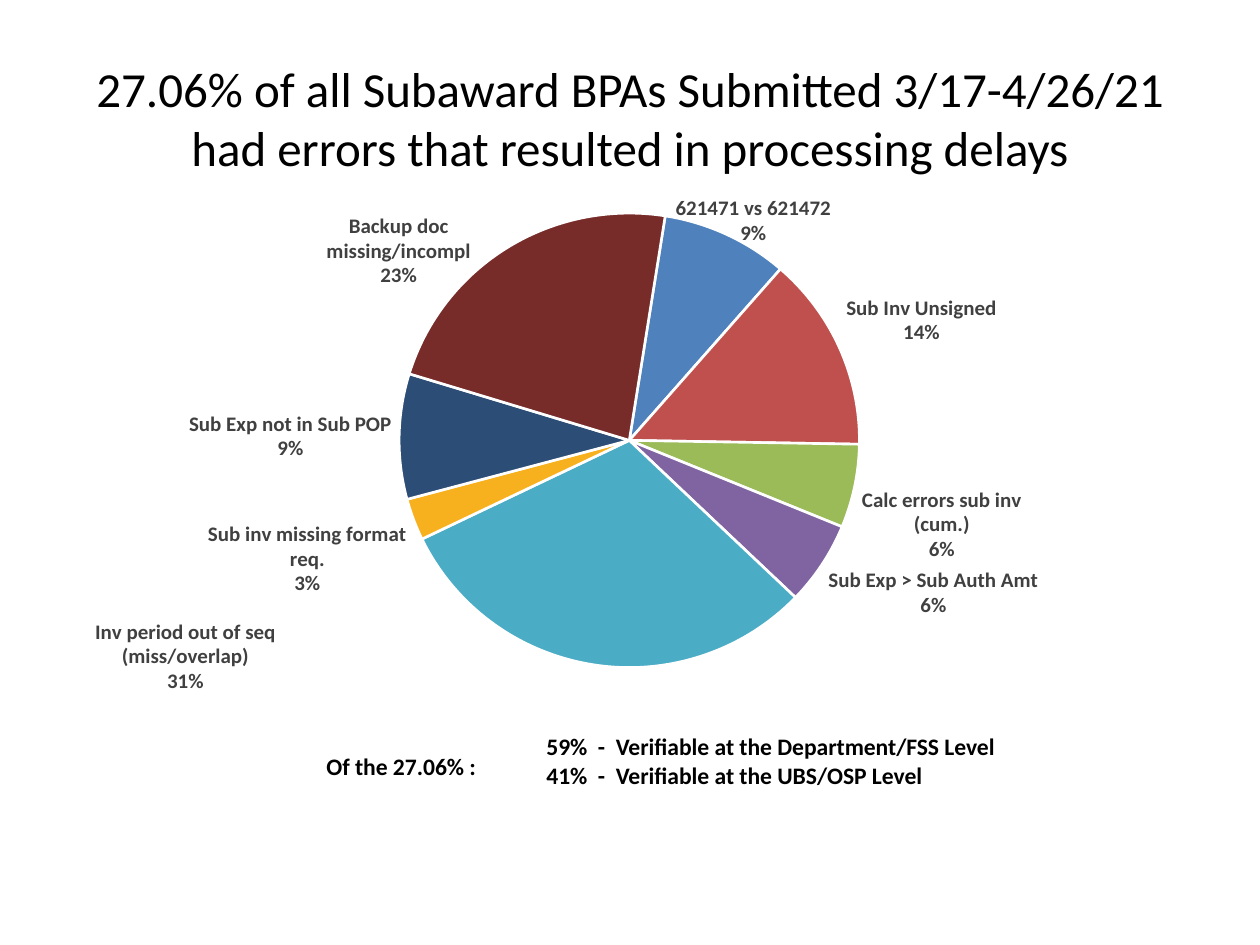
from lxml import etree
from pptx import Presentation
from pptx.chart.data import CategoryChartData
from pptx.dml.color import RGBColor
from pptx.enum.chart import XL_CHART_TYPE as ChartType, XL_LABEL_POSITION as LabelPos
from pptx.enum.text import MSO_ANCHOR as Anchor, PP_ALIGN as Align
from pptx.oxml import parse_xml
from pptx.oxml.ns import nsdecls, qn
from pptx.util import Emu, Pt

PX = 914400 / 126
FONT = "Calibri"
BLACK = RGBColor(0x00, 0x00, 0x00)
WHITE = RGBColor(0xFF, 0xFF, 0xFF)
GREY = RGBColor(0x40, 0x40, 0x40)

# Error type, share of errors, slice colour
ERRORS = [
    ("621471 vs 621472", 9, RGBColor(0x4F, 0x81, 0xBD)),
    ("Sub Inv Unsigned", 14, RGBColor(0xC0, 0x50, 0x4D)),
    ("Calc errors sub inv (cum.)", 6, RGBColor(0x9B, 0xBB, 0x59)),
    ("Sub Exp > Sub Auth Amt", 6, RGBColor(0x80, 0x64, 0xA2)),
    ("Inv period out of seq (miss/overlap)", 31, RGBColor(0x4B, 0xAC, 0xC6)),
    ("Sub inv missing format req.", 3, RGBColor(0xF7, 0xB1, 0x1E)),
    ("Sub Exp not in Sub POP", 9, RGBColor(0x2C, 0x4D, 0x75)),
    ("Backup doc missing/incompl", 23, RGBColor(0x77, 0x2C, 0x2A)),
]
# Labels moved from their usual place, as shares of the chart size
LABEL_SHIFTS = {0: (-0.05, 0.03), 4: (-0.3, -0.09), 7: (-0.03, 0.08)}
PLOT_AREA = {"x": 0.28, "y": 0.095, "w": 0.425, "h": 0.783}


def px(*lengths):
    return [Emu(round(n * PX)) for n in lengths]


def set_font(font, size, color, bold=False):
    font.name, font.size, font.bold = FONT, Pt(size), bold
    font.color.rgb = color


def add_text(slide, box, paragraphs, size, bold=False, wrap=False,
             align=Align.LEFT, anchor=Anchor.TOP):
    """Add a text box; a newline inside a paragraph is a line break."""
    tf = slide.shapes.add_textbox(*px(*box)).text_frame
    tf.word_wrap, tf.vertical_anchor = wrap, anchor
    for i, text in enumerate(paragraphs):
        p = tf.add_paragraph() if i else tf.paragraphs[0]
        p.alignment = align
        for j, line in enumerate(text.split("\n")):
            if j:
                p.add_line_break()
            r = p.add_run()
            r.text = line
            set_font(r.font, size, BLACK, bold)


def manual_layout(**values):
    layout = parse_xml(f"<c:layout {nsdecls('c')}><c:manualLayout/></c:layout>")
    for tag, value in values.items():
        etree.SubElement(layout[0], qn(f"c:{tag}")).set("val", str(value))
    return layout


def show_name_and_percent(labels):
    """Show category and percent on two lines, for all labels or for one."""
    for tag, val in (("showVal", "0"), ("showCatName", "1"), ("showPercent", "1")):
        labels.find(qn(f"c:{tag}")).set("val", val)
    separator = parse_xml(f"<c:separator {nsdecls('c')}>\n</c:separator>")
    labels.find(qn("c:showBubbleSize")).addnext(separator)


def style_labels(series):
    labels = series.data_labels
    labels.number_format, labels.number_format_is_linked = "0%", False
    moved = [series.points[i].data_label for i in LABEL_SHIFTS]
    for label in [labels, *moved]:
        set_font(label.font, 12, GREY, True)
        label.position = LabelPos.OUTSIDE_END

    d_lbls = series._element.find(qn("c:dLbls"))
    show_name_and_percent(d_lbls)
    d_lbls.find(qn("c:showLeaderLines")).set("val", "0")
    for d_lbl, (x, y) in zip(d_lbls.findall(qn("c:dLbl")), LABEL_SHIFTS.values()):
        show_name_and_percent(d_lbl)
        d_lbl.find(qn("c:idx")).addnext(manual_layout(x=x, y=y))


def add_pie(slide, box):
    names, shares, colors = zip(*ERRORS)
    data = CategoryChartData(number_format="0")
    data.categories = names
    data.add_series("Series 1", shares)
    chart = slide.shapes.add_chart(ChartType.PIE, *px(*box), data).chart
    chart.has_title = chart.has_legend = False
    set_font(chart.font, 10, BLACK)
    plot = chart.plots[0]
    plot.vary_by_categories = True
    series = plot.series[0]

    # Slices
    for i, color in enumerate(colors):
        fmt = series.points[i].format
        fmt.fill.solid()
        fmt.fill.fore_color.rgb = color
        fmt.line.color.rgb = WHITE
        fmt.line.width = Pt(1.5)
    style_labels(series)

    # Rotation and plot position
    pie = plot._element
    angle = pie.find(qn("c:firstSliceAng"))
    if angle is None:
        angle = etree.SubElement(pie, qn("c:firstSliceAng"))
    angle.set("val", "9")
    area = pie.getparent()
    for old in area.findall(qn("c:layout")):
        area.remove(old)
    area.insert(0, manual_layout(layoutTarget="inner", xMode="edge",
                                 yMode="edge", **PLOT_AREA))


def main():
    prs = Presentation()
    prs.slide_width, prs.slide_height = px(1260, 945)
    slide = prs.slides.add_slide(prs.slide_layouts[6])

    # Title
    add_text(slide, (63, 38, 1134, 158),
             ["27.06% of all Subaward BPAs Submitted 3/17-4/26/21\n"
              "had errors that resulted in processing delays"],
             28, wrap=True, align=Align.CENTER, anchor=Anchor.MIDDLE)

    # Summary under the chart
    add_text(slide, (314, 746, 183, 42), ["Of the 27.06% :"], 13.5, bold=True)
    add_text(slide, (534, 726, 479, 71),
             ["59%  -  Verifiable at the Department/FSS Level",
              "41%  -  Verifiable at the UBS/OSP Level"], 13.5, bold=True)

    # Error types
    add_pie(slide, (95, 158, 1085, 588))

    prs.save("out.pptx")


if __name__ == "__main__":
    main()
